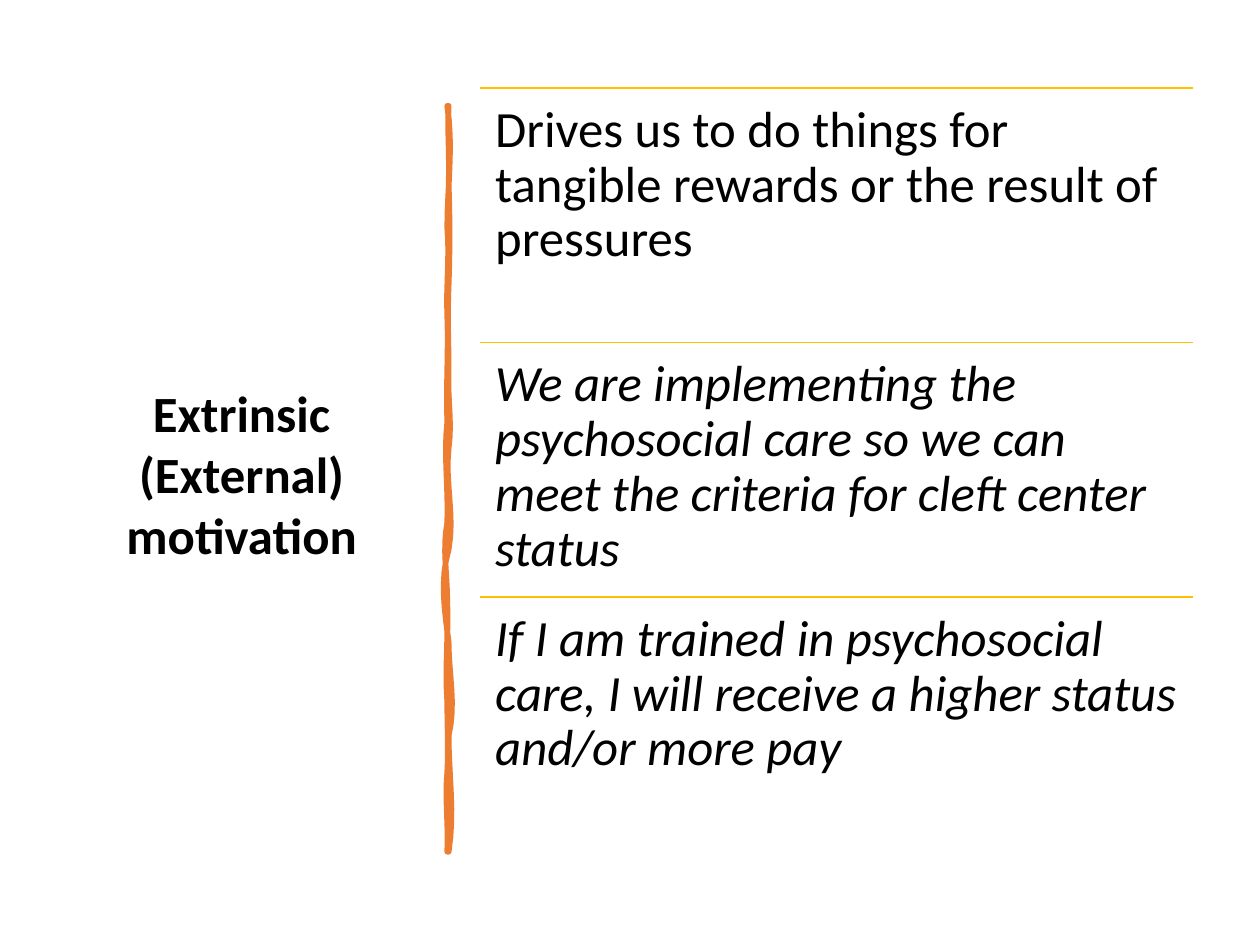
from lxml.etree import SubElement
from pptx import Presentation
from pptx.dml.color import RGBColor
from pptx.enum.shapes import MSO_CONNECTOR
from pptx.enum.text import MSO_ANCHOR, PP_ALIGN
from pptx.oxml.ns import qn
from pptx.util import Pt

BLACK = RGBColor(0x00, 0x00, 0x00)
ORANGE = RGBColor(0xED, 0x7D, 0x31)
GOLD = RGBColor(0xFF, 0xC0, 0x00)

TITLE = "Extrinsic (External) motivation"
ROWS = [
    ("Drives us to do things for tangible rewards or the result of pressures", False),
    ("We are implementing the psychosocial care so we can meet the criteria "
     "for cleft center status", True),
    ("If I am trained in psychosocial care, I will receive a higher status "
     "and/or more pay", True),
]
ROW_LEFT, ROW_TOP, ROW_WIDTH, ROW_HEIGHT = 274.3, 50.4, 407.5, 145.4

# Brush stroke edges: two sideways pulls and the end height of each curve
STROKE_X, STROKE_TOP, STROKE_BOTTOM, HALF_WIDTH = 256, 60.5, 486.7, 0.4
RIGHT_EDGE = [(-0.4, 1.1, 105), (1.1, 1.1, 163), (-0.4, 0.4, 212), (-0.4, 2.5, 256),
              (-1.8, 4, 314), (-4.7, -1.8, 367), (0.4, 4.7, 420.5), (0.4, 4, STROKE_BOTTOM)]
LEFT_EDGE = [(0.4, -1.8, 441.4), (0.4, -0.4, 401), (-1.8, 0.4, 343.4), (-0.4, -3.2, 298.8),
             (0.4, -2.5, 241.2), (-1.1, 0.4, 180), (-1.1, 1.1, 130.3), (-0.4, 3.2, STROKE_TOP)]


def edge_points(x, y, curves, steps=8):
    """Sample cubic curves that all start and end at the same x."""
    points = [(x, y)]
    for pull_1, pull_2, end in curves:
        for i in range(1, steps + 1):
            t = i / steps
            u = 1 - t
            offset = x * (u**3 + t**3) + 3 * u * t * (u * pull_1 + t * pull_2)
            points.append((offset, y + (end - y) * t))
        y = end
    return points


class SlideBuilder:
    font = {"name": "Calibri", "size": Pt(29)}

    def __init__(self, slide):
        self.slide = slide

    def text(self, text, left, top, width, height, frame, para, font):
        sp = self.slide.shapes.add_textbox(Pt(left), Pt(top), Pt(width), Pt(height))
        tf = sp.text_frame
        p = tf.paragraphs[0]
        r = p.add_run()
        r.text = text
        for target, values in ((tf, {"word_wrap": True, **frame}), (p, para),
                               (r.font, {**self.font, **font})):
            for name, value in values.items():
                setattr(target, name, value)
        r.font.color.rgb = BLACK

    def rule(self, left, top, width):
        line = self.slide.shapes.add_connector(
            MSO_CONNECTOR.STRAIGHT, Pt(left), Pt(top), Pt(left + width), Pt(top))
        line.line.color.rgb = GOLD
        line.line.width = Pt(1)
        SubElement(line._element.spPr, qn("a:effectLst"))

    def brush_stroke(self):
        points = (edge_points(HALF_WIDTH, STROKE_TOP, RIGHT_EDGE)
                  + edge_points(-HALF_WIDTH, STROKE_BOTTOM, LEFT_EDGE))
        points = [(Pt(STROKE_X + x), Pt(y)) for x, y in points]
        builder = self.slide.shapes.build_freeform(*points[0])
        builder.add_line_segments(points[1:], close=True)
        sp = builder.convert_to_shape()
        sp.shadow.inherit = False
        sp.fill.solid()
        sp.fill.fore_color.rgb = ORANGE
        sp.line.color.rgb = ORANGE
        sp.line.width = Pt(3.25)
        SubElement(sp.line._ln, qn("a:round"))


def main():
    prs = Presentation()
    prs.slide_width, prs.slide_height = Pt(720), Pt(540)
    s = SlideBuilder(prs.slides.add_slide(prs.slide_layouts[6]))

    s.text(TITLE, 37.4, 50.4, 201.6, 440,
           {"vertical_anchor": MSO_ANCHOR.MIDDLE},
           {"alignment": PP_ALIGN.CENTER}, {"bold": True})
    s.brush_stroke()

    margins = {f"margin_{side}": Pt(8.7) for side in ("left", "top", "right", "bottom")}
    for i, (text, italic) in enumerate(ROWS):
        top = ROW_TOP + i * ROW_HEIGHT
        s.rule(ROW_LEFT, top, ROW_WIDTH)
        s.text(text, ROW_LEFT, top, ROW_WIDTH, ROW_HEIGHT, margins,
               {"line_spacing": 0.9}, {"italic": italic})

    prs.save("out.pptx")


if __name__ == "__main__":
    main()
